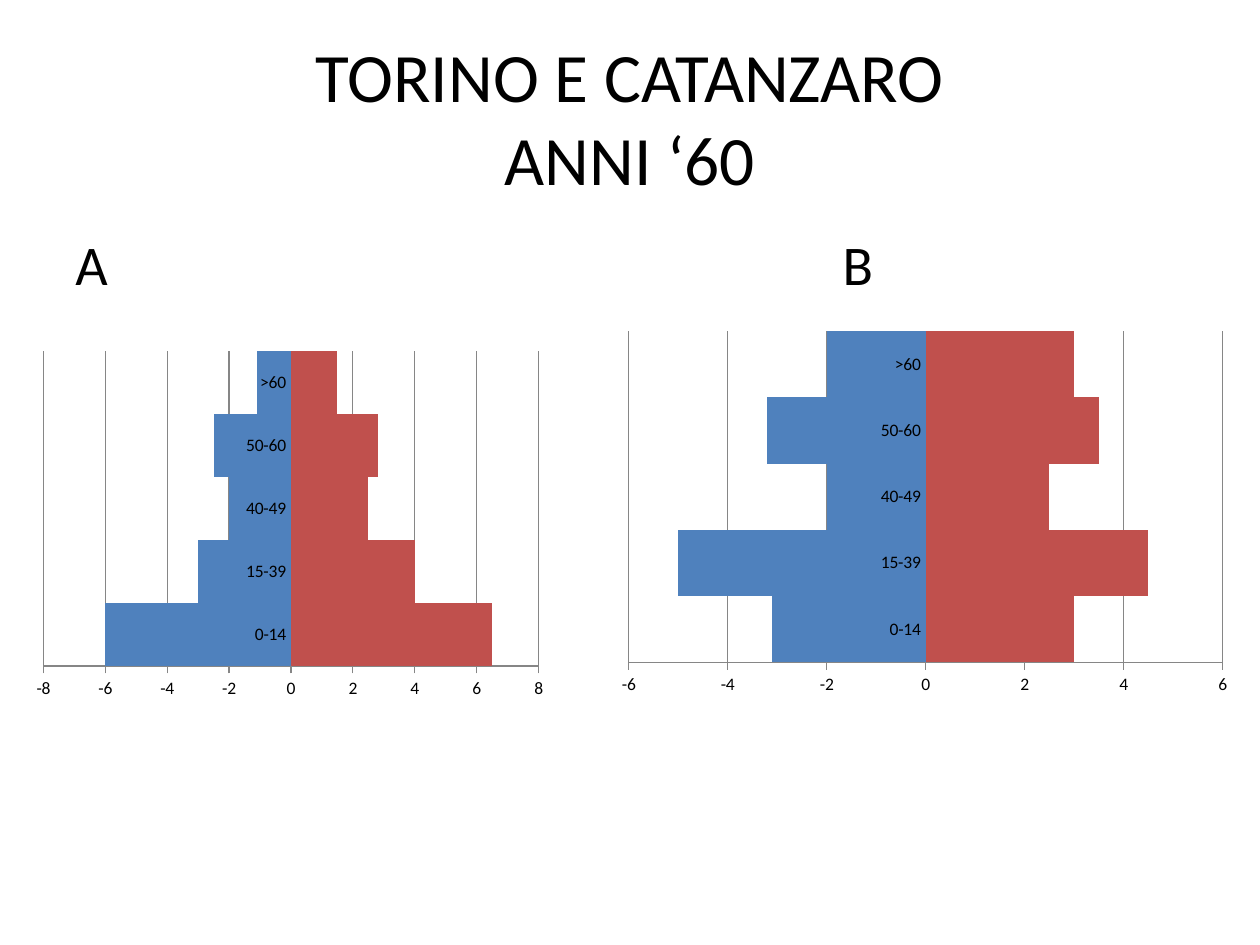
"""Build a slide comparing the population pyramids of Torino and Catanzaro."""
import pptx
import pptx.chart.data
import pptx.dml.color
import pptx.enum.chart
import pptx.enum.text
import pptx.oxml
import pptx.oxml.ns
import pptx.util
from pptx.util import Inches

COLORS = {"text": "000000", "left": "4F81BD", "right": "C0504D", "axis": "868686"}
AGES = ["0-14", "15-39", "40-49", "50-60", ">60"]
PYRAMIDS = [
    {"place": (4.84, 2.57), "plot": (0.03, 0.02, 0.943, 0.876), "limit": 6,
     "left": [-3.1, -5, -2, -3.2, -2], "right": [3, 4.5, 2.5, 3.5, 3]},
    {"place": (0.12, 2.65), "plot": (0.045, 0.046, 0.786, 0.833), "limit": 8,
     "left": [-6, -3, -2, -2.5, -1.1], "right": [6.5, 4, 2.5, 2.8, 1.5]},
]
HEADINGS = [
    ("TORINO E CATANZARO\vANNI ‘60", (0.5, 0.3, 9, 1.25), 39.6, "CENTER", "MIDDLE"),
    ("A", (0.5, 1.77, 1, 0.7), 32, "LEFT", "TOP"),
    ("B", (6.59, 1.77, 1, 0.7), 32, "LEFT", "TOP"),
]


def rgb(name):
    return pptx.dml.color.RGBColor.from_string(COLORS[name])


def style_line(line):
    line.color.rgb = rgb("axis")
    line.width = pptx.util.Pt(0.75)


presentation = pptx.Presentation()
presentation.slide_width = Inches(10)
presentation.slide_height = Inches(7.5)
slide = presentation.slides.add_slide(presentation.slide_layouts[6])

for wording, place, size, alignment, anchor in HEADINGS:
    heading = slide.shapes.add_textbox(*map(Inches, place)).text_frame
    heading.word_wrap = True
    heading.vertical_anchor = pptx.enum.text.MSO_ANCHOR[anchor]
    heading.text = wording
    heading.paragraphs[0].alignment = pptx.enum.text.PP_ALIGN[alignment]
    for run in heading.paragraphs[0].runs:
        run.font.name = "Calibri"
        run.font.size = pptx.util.Pt(size)
        run.font.color.rgb = rgb("text")

for pyramid in PYRAMIDS:
    population = pptx.chart.data.CategoryChartData()
    population.categories = AGES
    population.add_series("Series 1", pyramid["left"])
    population.add_series("Series 2", pyramid["right"])
    left, top = pyramid["place"]
    chart = slide.shapes.add_chart(
        pptx.enum.chart.XL_CHART_TYPE.BAR_CLUSTERED,
        Inches(left), Inches(top), Inches(5), Inches(3), population).chart
    chart.has_title = False
    chart.has_legend = False
    chart.font.name = "Calibri"
    chart.font.size = pptx.util.Pt(10)
    chart.font.color.rgb = rgb("text")

    bars = chart.plots[0]
    bars.gap_width = 0
    bars.overlap = 100
    bars.vary_by_categories = False
    for series, side in zip(bars.series, ("left", "right")):
        series.invert_if_negative = False
        series.format.fill.solid()
        series.format.fill.fore_color.rgb = rgb(side)

    ages = chart.category_axis
    ages.major_tick_mark = pptx.enum.chart.XL_TICK_MARK.NONE
    ages.has_major_gridlines = False
    scale = chart.value_axis
    scale.minimum_scale = -pyramid["limit"]
    scale.maximum_scale = pyramid["limit"]
    scale.major_unit = 2
    scale.major_tick_mark = pptx.enum.chart.XL_TICK_MARK.OUTSIDE
    scale.has_major_gridlines = True
    for line in (ages.format.line, scale.format.line, scale.major_gridlines.format.line):
        style_line(line)

    plot_area = chart.element.find(".//" + pptx.oxml.ns.qn("c:plotArea"))
    for old_layout in plot_area.findall(pptx.oxml.ns.qn("c:layout")):
        plot_area.remove(old_layout)
    measures = "".join(
        f'<c:{tag} val="{value}"/>' for tag, value in zip("xywh", pyramid["plot"]))
    plot_area.insert(0, pptx.oxml.parse_xml(
        f'<c:layout {pptx.oxml.ns.nsdecls("c")}><c:manualLayout>'
        '<c:layoutTarget val="inner"/><c:xMode val="edge"/><c:yMode val="edge"/>'
        f'{measures}</c:manualLayout></c:layout>'))

presentation.save("out.pptx")
